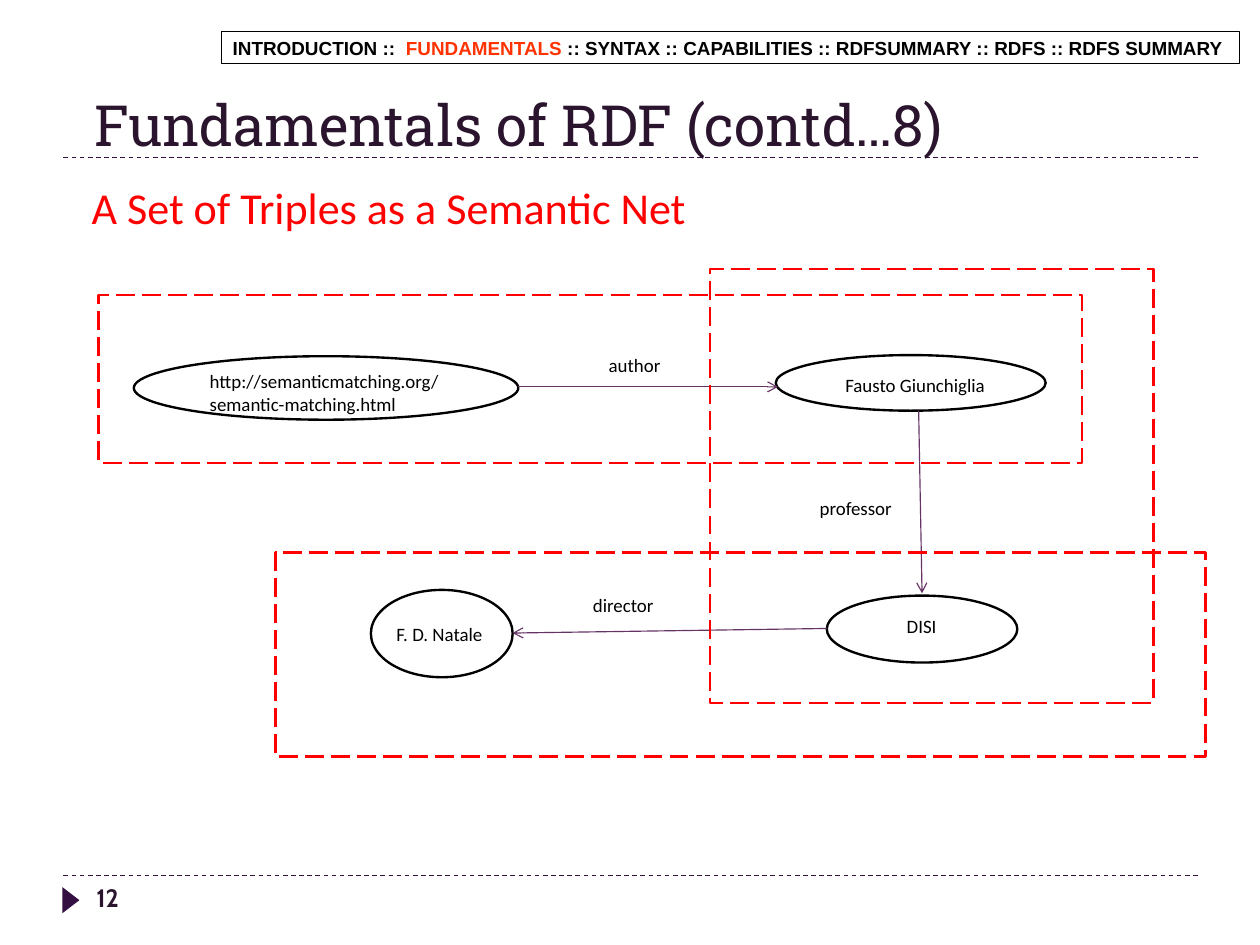
from lxml import etree
from pptx import Presentation
from pptx.dml.color import RGBColor
from pptx.enum import dml, shapes, text
from pptx.oxml import ns
from pptx.util import Inches, Pt

BLACK = RGBColor(0, 0, 0)
WHITE = RGBColor(255, 255, 255)
RED = RGBColor(255, 0, 0)
ORANGE = RGBColor(0xFF, 0x33, 0x00)
PLUM = RGBColor(0x66, 0x33, 0x66)
DARK_PLUM = RGBColor(0x33, 0x0F, 0x42)
INK = RGBColor(0x2B, 0x14, 0x2D)

LEFT, CENTER, JUSTIFY = text.PP_ALIGN.LEFT, text.PP_ALIGN.CENTER, text.PP_ALIGN.JUSTIFY
TOP, MIDDLE, BOTTOM = text.MSO_ANCHOR.TOP, text.MSO_ANCHOR.MIDDLE, text.MSO_ANCHOR.BOTTOM


def write(sp, runs, size=12, font="Calibri", bold=False, align=CENTER, anchor=TOP,
          inset=(0.1, 0.05), wrap=True):
    """Fill a shape's text frame with one paragraph of (words, colour) runs."""
    tf = sp.text_frame
    tf.word_wrap = wrap
    tf.vertical_anchor = anchor
    tf.margin_left = tf.margin_right = Inches(inset[0])
    tf.margin_top = tf.margin_bottom = Inches(inset[1])
    p = tf.paragraphs[0]
    p.alignment = align
    for words, colour in runs:
        r = p.add_run()
        r.text = words
        r.font.name = font
        r.font.size = Pt(size)
        r.font.bold = bold
        r.font.color.rgb = colour


def add_text(s, box, words, colour=BLACK, **style):
    """Add a text box with a single run."""
    sp = s.shapes.add_textbox(*map(Inches, box))
    write(sp, [(words, colour)], **style)


def add_shape(s, kind, box, fill=None, line=None, width=1.5, dash=None):
    """Add a flat preset shape with optional fill and outline."""
    sp = s.shapes.add_shape(kind, *map(Inches, box))
    sp.shadow.inherit = False
    if fill is None:
        sp.fill.background()
    else:
        sp.fill.solid()
        sp.fill.fore_color.rgb = fill
    if line is None:
        sp.line.fill.background()
    else:
        sp.line.color.rgb = line
        sp.line.width = Pt(width)
        sp.line.dash_style = dash
    return sp


def add_line(s, start, end, colour, dash=None, arrow=False):
    """Add a thin straight line, dashed or with an arrowhead at its end."""
    sp = s.shapes.add_connector(shapes.MSO_CONNECTOR.STRAIGHT, *map(Inches, start + end))
    sp.line.color.rgb = colour
    sp.line.width = Pt(0.75)
    sp.line.dash_style = dash
    if arrow:
        etree.SubElement(sp.line._get_or_add_ln(), ns.qn("a:tailEnd"), type="arrow")
    etree.SubElement(sp._element.spPr, ns.qn("a:effectLst"))


def add_node(s, oval, label, words, align=CENTER):
    """Add an oval of the semantic net with its label."""
    add_shape(s, shapes.MSO_SHAPE.OVAL, oval, line=BLACK)
    add_text(s, label, words, align=align)


def add_relation(s, start, end, label, words):
    """Add a labelled arrow between two nodes."""
    add_line(s, start, end, PLUM, arrow=True)
    add_text(s, label, words)


def add_frame(s):
    """Add the rules, page marker, page number and headings."""
    for y in (7.72, 1.39):
        add_line(s, (0.56, y), (10.56, y), DARK_PLUM, dash=dml.MSO_LINE.DASH)
    marker = add_shape(s, shapes.MSO_SHAPE.ISOSCELES_TRIANGLE, (0.51, 7.86, 0.23, 0.15),
                       fill=DARK_PLUM)
    marker.rotation = 90
    add_text(s, (0.74, 7.72, 2.41, 0.44), "12", INK, size=16, font="Cabin", bold=True,
             align=LEFT, inset=(0.11, 0.06))
    add_text(s, (0.72, 0.25, 10, 1.2), "Fundamentals of RDF (contd…8)", INK, size=36,
             font="Roboto Slab", align=LEFT, anchor=BOTTOM, inset=(0.11, 0.06))
    add_text(s, (0.71, 1.54, 9.84, 0.57), "A Set of Triples as a Semantic Net", RED,
             size=28, align=JUSTIFY)


def add_net(s):
    """Add the nodes, their relations and a dashed box round each triple."""
    add_node(s, (1.18, 3.14, 3.39, 0.56), (1.75, 3.21, 2.51, 0.45),
             "http://semanticmatching.org/semantic-matching.html", LEFT)
    add_node(s, (6.84, 3.13, 2.38, 0.49), (7.1, 3.24, 1.94, 0.3), "Fausto Giunchiglia")
    add_node(s, (7.29, 5.25, 1.68, 0.59), (7.57, 5.37, 1.15, 0.3), "DISI ")
    add_node(s, (3.27, 5.2, 1.25, 0.77), (3.29, 5.44, 1.17, 0.3), "F. D. Natale")
    add_relation(s, (4.57, 3.41), (6.86, 3.41), (5.07, 3.07, 1.05, 0.27), "author")
    add_relation(s, (8.1, 3.62), (8.13, 5.23), (7.02, 4.33, 1.05, 0.3), "professor")
    add_relation(s, (7.29, 5.54), (4.52, 5.58), (4.97, 5.18, 1.05, 0.3), "director")
    for triple in ((0.87, 2.6, 8.67, 1.48), (6.26, 2.37, 3.91, 3.83), (2.43, 4.87, 8.2, 1.8)):
        add_shape(s, shapes.MSO_SHAPE.RECTANGLE, triple, line=RED,
                  dash=dml.MSO_LINE.LONG_DASH)


def add_navigation(s):
    """Add the section bar with the current section highlighted."""
    bar = add_shape(s, shapes.MSO_SHAPE.RECTANGLE, (1.95, 0.28, 8.98, 0.28), fill=WHITE,
                    line=BLACK, width=0.75)
    write(bar, [("INTRODUCTION ::  ", BLACK), ("FUNDAMENTALS", ORANGE),
                (" :: SYNTAX :: CAPABILITIES :: RDFSUMMARY :: RDFS :: RDFS SUMMARY ", BLACK)],
          font="Arial", bold=True, anchor=MIDDLE, inset=(0.08, 0.04), wrap=False)


def main():
    """Build the slide and save it."""
    prs = Presentation()
    prs.slide_width, prs.slide_height = Inches(11.11), Inches(8.33)
    s = prs.slides.add_slide(prs.slide_layouts[6])
    add_frame(s)
    add_net(s)
    add_navigation(s)
    prs.save("out.pptx")


if __name__ == "__main__":
    main()
